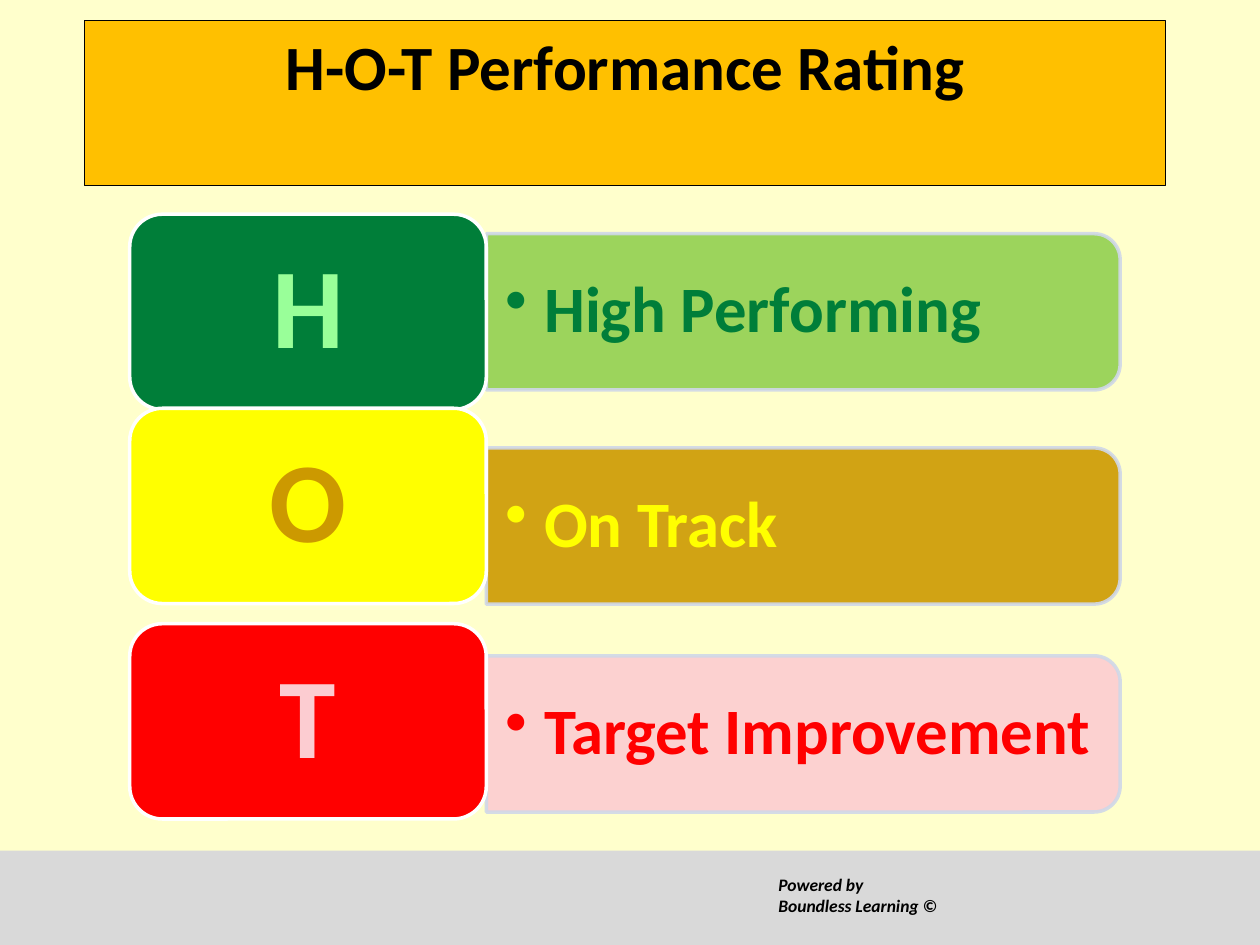
from lxml import etree
from pptx import Presentation, util as u
from pptx.dml.color import RGBColor
from pptx.enum import shapes, text
from pptx.oxml.ns import qn

CREAM = RGBColor(0xFF, 0xFF, 0xCC)
GREY = RGBColor(0xD9, 0xD9, 0xD9)
AMBER = RGBColor(0xFF, 0xC0, 0x00)
BLACK = RGBColor(0, 0, 0)
WHITE = RGBColor(0xFF, 0xFF, 0xFF)
EDGE = RGBColor(0xD0, 0xD8, 0xE8)
LIME = RGBColor(0x92, 0xD0, 0x50)
GREEN = RGBColor(0x00, 0x7E, 0x39)
MINT = RGBColor(0x99, 0xFF, 0x99)
GOLD = RGBColor(0xCC, 0x99, 0x00)
YELLOW = RGBColor(0xFF, 0xFF, 0x00)
PINK = RGBColor(0xFC, 0xCC, 0xD1)
RED = RGBColor(0xFF, 0x00, 0x00)

KIND = shapes.MSO_SHAPE
ALIGN = text.PP_ALIGN
ANCHOR = text.MSO_ANCHOR
COLS, ROWS = 100, 75
UNIT = u.Inches(0.1)

RATINGS = [
    ("H", "High Performing", 24.75, 24.75, GREEN, MINT, LIME, GREEN),
    ("O", "On Track", 41.75, 40.15, YELLOW, GOLD, GOLD, YELLOW),
    ("T", "Target Improvement", 58.25, 57.25, RED, PINK, PINK, RED),
]


def grid(box):
    """Turn a box in grid units into slide lengths."""
    return [round(n * UNIT) for n in box]


def fade(fill):
    """Make a solid fill or line ninety per cent opaque."""
    for tone in fill._xPr.iter(qn("a:srgbClr")):
        etree.SubElement(tone, qn("a:alpha")).set("val", "90000")


def block(slide, kind, box, fill, line=None, width=0):
    """Draw one flat preset shape."""
    shape = slide.shapes.add_shape(kind, *grid(box))
    shape.shadow.inherit = False
    shape.fill.solid()
    shape.fill.fore_color.rgb = fill
    if line is None:
        shape.line.fill.background()
    else:
        shape.line.color.rgb = line
        shape.line.width = u.Pt(width)
    return shape


def bullet(para):
    """Give a paragraph a hanging round bullet."""
    props = para._p.get_or_add_pPr()
    props.set("marL", str(u.Inches(0.31)))
    props.set("indent", str(-u.Inches(0.31)))
    etree.SubElement(props, qn("a:buChar")).set("char", "•")


def write(shape, words, size, color, align, anchor=ANCHOR.MIDDLE,
          pad=(0.1, 0.05), space=None, dot=False, slant=None):
    """Fill a shape with bold text."""
    frame = shape.text_frame
    frame.word_wrap = True
    frame.vertical_anchor = anchor
    frame.margin_left = frame.margin_right = u.Inches(pad[0])
    frame.margin_top = frame.margin_bottom = u.Inches(pad[1])
    frame.text = words
    for para in frame.paragraphs:
        para.alignment = align
        if space:
            para.line_spacing = space
        if dot:
            bullet(para)
        for font in [para.font] + [run.font for run in para.runs]:
            font.name = "Calibri"
            font.size = u.Pt(size)
            font.bold = True
            font.italic = slant
            font.color.rgb = color


def title(slide, box):
    """Draw the heading panel."""
    panel = block(slide, KIND.RECTANGLE, box, AMBER, BLACK, 0.75)
    write(panel, "H-O-T Performance Rating\v", 36, BLACK, ALIGN.CENTER)


def rating(slide, left, row):
    """Draw one letter tile and the bar to its right."""
    letter, label, mid, core, fill, ink, tint, tone = row
    wide, high, span, deep = 28.3, 15.5, 50.3, 12.4
    edge = left + wide
    spin = (edge + (span - deep) / 2, mid - span / 2, deep, span)
    bar = block(slide, KIND.ROUND_2_SAME_RECTANGLE, spin, tint, EDGE, 2)
    bar.rotation = 90
    fade(bar.fill)
    fade(bar.line.fill)
    note = slide.shapes.add_textbox(*grid((edge, mid - 5.6, 49.7, 11.2)))
    write(note, label, 37, tone, ALIGN.LEFT, pad=(0.15, 0.08),
          space=0.9, dot=True)
    tile = block(slide, KIND.ROUNDED_RECTANGLE,
                 (left, core - high / 2, wide, high), fill, WHITE, 2)
    write(tile, letter, 65, ink, ALIGN.CENTER, pad=(0.27, 0.14), space=0.9)


def footer(slide, box):
    """Draw the bottom band with its credit."""
    left, top, wide, high = box
    block(slide, KIND.RECTANGLE, box, GREY)
    credit = block(slide, KIND.RECTANGLE,
                   (left + 0.608 * wide, top + 1.4, 15, 6.1), GREY)
    write(credit, "Powered by\nBoundless Learning ©", 10, BLACK,
          ALIGN.LEFT, ANCHOR.TOP, slant=True)


def main():
    """Build the slide and save it."""
    deck = Presentation()
    deck.slide_width, deck.slide_height = COLS * UNIT, ROWS * UNIT
    slide = deck.slides.add_slide(deck.slide_layouts[6])
    back = slide.background.fill
    back.solid()
    back.fore_color.rgb = CREAM
    footer(slide, (0, 0.9 * ROWS, COLS, 0.1 * ROWS))
    title(slide, (6.7, 1.65, 85.8, 13.1))
    for row in RATINGS:
        rating(slide, 10.3, row)
    deck.save("out.pptx")


if __name__ == "__main__":
    main()
